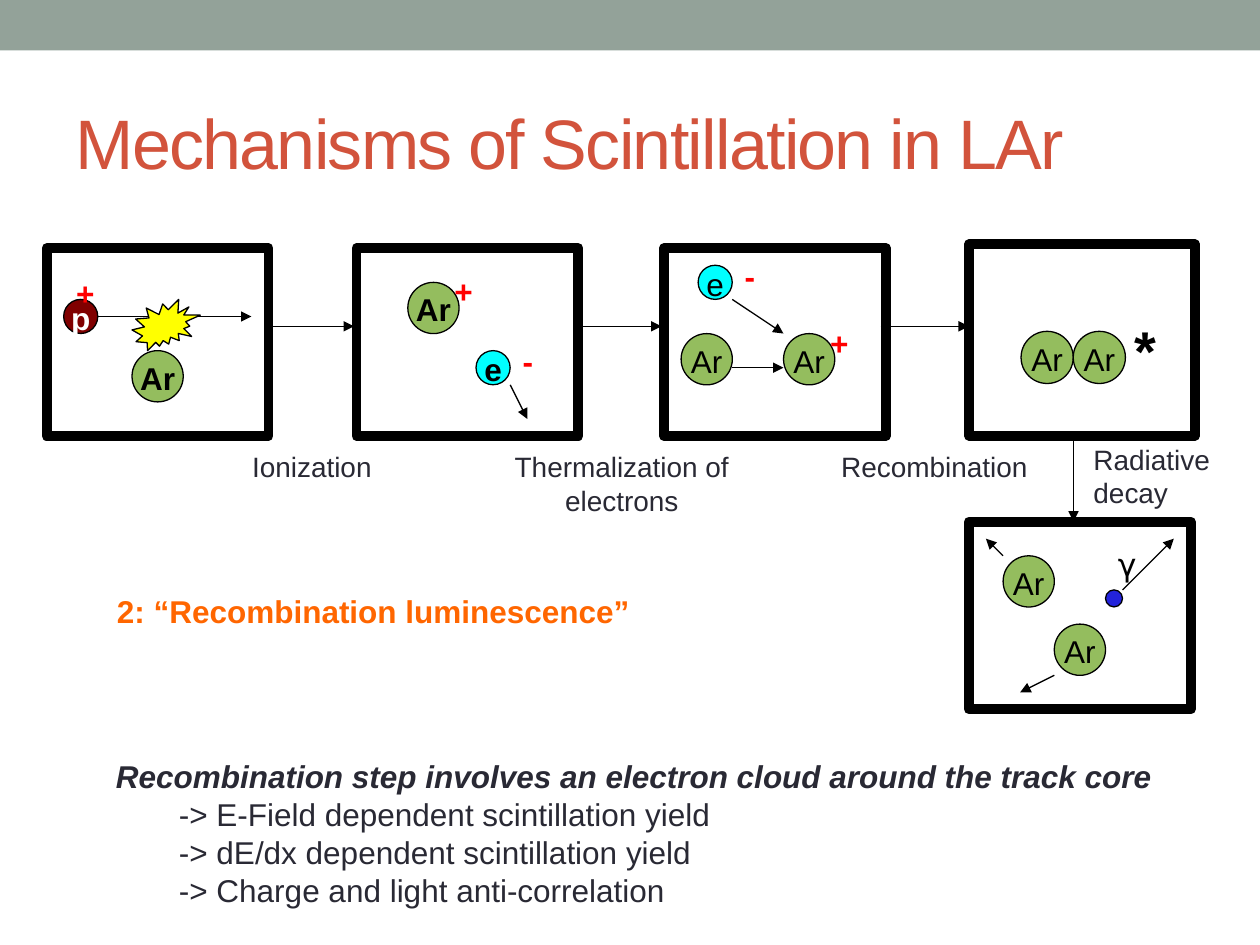
from lxml import etree
from pptx import Presentation
from pptx import util as u
from pptx.dml import color
from pptx.enum import shapes, text
from pptx.oxml import ns

CELL = 0.1355  # panels are grids of 13 columns by 11 rows
COLUMNS, ROWS = 13, 11
BLACK, WHITE, RED, DARK = "000000", "FFFFFF", "FF0000", "292934"
GREEN, CYAN, MAROON = "94BD5E", "00FFFF", "800000"
OVAL = shapes.MSO_SHAPE.OVAL
CENTER = text.PP_ALIGN.CENTER


def rgb(value):
    return color.RGBColor.from_string(value)


def inches(*values):
    return [u.Inches(value) for value in values]


def set_frame(shape, top=0.05, **options):
    settings = {"margin_left": u.Inches(0.1), "margin_right": u.Inches(0.1),
                "margin_top": u.Inches(top), "margin_bottom": u.Inches(0.05),
                "word_wrap": True, "vertical_anchor": text.MSO_ANCHOR.TOP,
                "auto_size": text.MSO_AUTO_SIZE.NONE, **options}
    for name, value in settings.items():
        setattr(shape.text_frame, name, value)


def write(paragraph, words, size=18, fill=BLACK, align=text.PP_ALIGN.LEFT, **formats):
    paragraph.alignment = align
    run = paragraph.add_run()
    run.text = words
    run.font.color.rgb = rgb(fill)
    for name, value in {"name": "Arial", "size": u.Pt(size), **formats}.items():
        setattr(run.font, name, value)
    return run


def add_text(slide, box, lines, top=0.05, **formats):
    shape = slide.shapes.add_textbox(*inches(*box))
    set_frame(shape, top)
    for index, line in enumerate(lines):
        frame = shape.text_frame
        write(frame.add_paragraph() if index else frame.paragraphs[0], line, **formats)


def add_shape(slide, kind, box, fill, line_width=0.75):
    shape = slide.shapes.add_shape(kind, *inches(*box))
    shape.shadow.inherit = False
    shape.fill.solid()
    shape.fill.fore_color.rgb = rgb(fill)
    if line_width:
        shape.line.color.rgb = rgb(BLACK)
        shape.line.width = u.Pt(line_width)
    else:
        shape.line.fill.background()
    return shape


def add_arrow(slide, start, end):
    arrow = slide.shapes.add_connector(shapes.MSO_CONNECTOR.STRAIGHT, *inches(*start, *end))
    arrow.line.color.rgb = rgb(BLACK)
    arrow.line.width = u.Pt(0.75)
    etree.SubElement(arrow.line._get_or_add_ln(), ns.qn("a:tailEnd"), type="triangle")
    etree.SubElement(arrow._element.spPr, ns.qn("a:effectLst"))


class Panel:
    """A framed box whose contents are placed by column and row."""

    def __init__(self, slide, left, top, cell=CELL, bold=False):
        self.slide, self.left, self.top = slide, left, top
        self.cell, self.bold = cell, bold
        add_shape(slide, shapes.MSO_SHAPE.RECTANGLE, self.box(0, 0, COLUMNS, ROWS), WHITE, 5.67)

    def point(self, column, row):
        return self.left + column * self.cell, self.top + row * self.cell

    def box(self, column, row, columns, rows):
        return *self.point(column, row), columns * self.cell, rows * self.cell

    def particle(self, column, row, label="Ar", size=3, fill=GREEN, ink=BLACK):
        shape = add_shape(self.slide, OVAL, self.box(column, row, size, size), fill)
        if label:
            set_frame(shape, 0.07, word_wrap=False, vertical_anchor=text.MSO_ANCHOR.MIDDLE)
            write(shape.text_frame.paragraphs[0], label, fill=ink, align=CENTER, bold=self.bold)

    def arrow(self, start, end):
        add_arrow(self.slide, self.point(*start), self.point(*end))

    def symbol(self, column, row, sign, top=0.07, **formats):
        formats = {"fill": RED, "bold": True, **formats}
        add_text(self.slide, self.box(column, row, 5, 2.7), [sign], top, **formats)


def draw_panels(slide):
    # Ionization: a charged particle strikes an atom
    panel = Panel(slide, 0.37, 1.97, bold=True)
    panel.particle(5, 6)
    panel.arrow((2, 4), (12, 4))
    panel.particle(1, 3, "p", 2, MAROON, WHITE)
    add_shape(slide, shapes.MSO_SHAPE.EXPLOSION2, panel.box(5, 3, 4, 3), "FFFF00")
    panel.symbol(1, 1, "+")

    # Ion and free electron
    panel = Panel(slide, 2.83, 1.97, bold=True)
    panel.particle(3, 2)
    panel.particle(7, 6, "e", 2, CYAN)
    panel.symbol(9, 5, "-")
    panel.symbol(5, 0.9, "+")
    panel.arrow((9, 8), (10, 10))

    # Recombination
    panel = Panel(slide, 5.27, 1.97)
    panel.particle(2, 1, "e", 2, CYAN)
    panel.particle(1, 5)
    panel.particle(7, 5)
    panel.arrow((4, 7), (7, 7))
    panel.arrow((4, 3), (7, 5))
    panel.symbol(9, 3.9, "+")
    panel.symbol(4, 0, "-")

    # Excited dimer, on a slightly larger grid
    panel = Panel(slide, 7.69, 1.94, cell=0.138)
    panel.particle(3, 5)
    panel.particle(6, 5)
    panel.symbol(8.8, 3.5, "*", 0.08, size=32, fill=BLACK)

    # Decay into two atoms and a photon
    panel = Panel(slide, 7.69, 4.14)
    panel.particle(5, 6)
    panel.particle(2, 2)
    panel.arrow((2, 2), (1, 1))
    panel.arrow((5, 9), (3, 10))
    panel.particle(8, 4, "", 1, "2323DC")
    panel.arrow((9, 4), (12, 1))
    panel.symbol(8, 1, "γ", 0.05, fill=BLACK, bold=False, name="DejaVu Sans")


def draw_steps(slide):
    for start, end in ((2.13, 2.81), (4.55, 5.25), (6.99, 7.69)):
        add_arrow(slide, (start, 2.59), (end, 2.59))
    add_arrow(slide, (8.52, 3.46), (8.52, 4.14))
    captions = ((1.45, "Ionization"), (3.91, "Thermalization of electrons"),
                (6.39, "Recombination"))
    for left, caption in captions:
        add_text(slide, (left, 3.52, 2.05, 0.64), [caption], size=16, fill=DARK, align=CENTER)
    add_text(slide, (8.58, 3.46, 2.05, 0.64), ["Radiative", "decay"], size=16, fill=DARK)


def fill_title(title):
    title.left, title.top, title.width, title.height = inches(0.5, 0.58, 9, 1.08)
    set_frame(title, vertical_anchor=text.MSO_ANCHOR.MIDDLE)
    run = write(title.text_frame.paragraphs[0], "Mechanisms of Scintillation in LAr", 40, "D2533C")
    run.font._element.set("spc", "-100")


def fill_body(body):
    body.left, body.top, body.width, body.height = inches(0.82, 5.96, 8.68, 1.5)
    set_frame(body)
    lines = ("Recombination step involves an electron cloud around the track core",
             "-> E-Field dependent scintillation yield",
             "-> dE/dx dependent scintillation yield",
             "-> Charge and light anti-correlation")
    for index, line in enumerate(lines):
        frame = body.text_frame
        paragraph = frame.add_paragraph() if index else frame.paragraphs[0]
        heading = index == 0
        write(paragraph, line, fill=DARK, bold=heading, italic=heading)
        paragraph.space_before = u.Pt(0)
        properties = paragraph._p.get_or_add_pPr()
        properties.set("marL", str(0 if heading else u.Inches(0.5)))
        properties.set("indent", "0")
        etree.SubElement(properties, ns.qn("a:buNone"))


def main():
    presentation = Presentation()
    presentation.slide_width, presentation.slide_height = inches(10, 7.5)
    slide = presentation.slides.add_slide(presentation.slide_layouts[1])
    add_shape(slide, shapes.MSO_SHAPE.RECTANGLE, (0, 0, 10, 0.4), "93A299", 0)
    fill_title(slide.shapes.title)
    draw_panels(slide)
    draw_steps(slide)
    add_text(slide, (0.83, 4.65, 6.43, 0.4), ["2: “Recombination luminescence”"],
             fill="FF6600", bold=True)
    fill_body(slide.placeholders[1])
    presentation.save("out.pptx")


if __name__ == "__main__":
    main()
